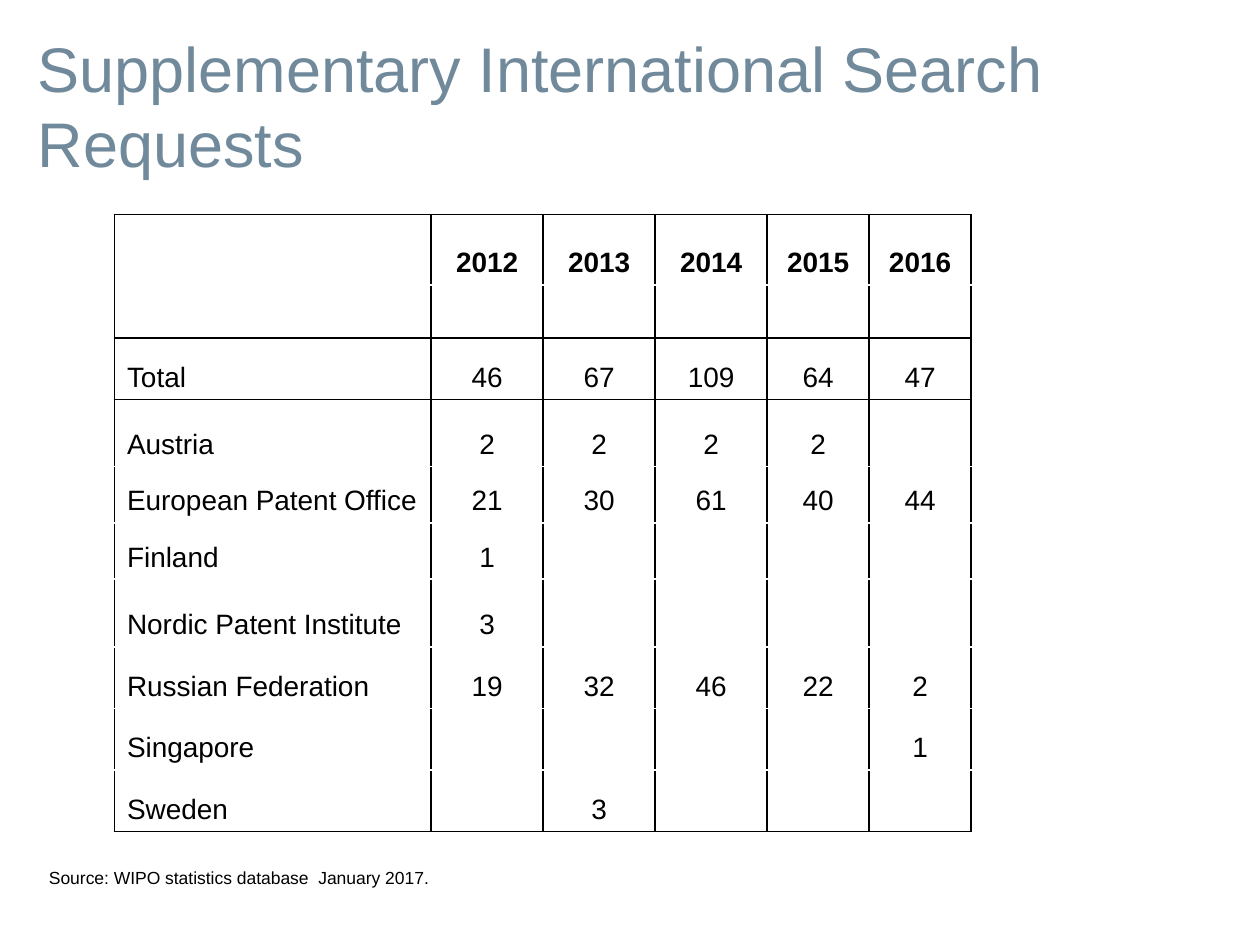
from dataclasses import dataclass

from lxml import etree
from pptx import Presentation
from pptx import util as u
from pptx.dml.color import RGBColor
from pptx.enum import text as t
from pptx.oxml import ns


@dataclass
class Theme:
    font: str = "Arial"
    ink: str = "000000"
    accent: str = "70899B"
    title: float = 36
    body: float = 16
    note: float = 10
    rule: float = 1
    hang: float = 27


YEARS = ["", "2012", "2013", "2014", "2015", "2016"]
ROWS = [
    YEARS,
    [""] * len(YEARS),
    ["Total", "46", "67", "109", "64", "47"],
    ["Austria", "2", "2", "2", "2", ""],
    ["European Patent Office", "21", "30", "61", "40", "44"],
    ["Finland", "1", "", "", "", ""],
    ["Nordic Patent Institute", "3", "", "", "", ""],
    ["Russian Federation", "19", "32", "46", "22", "2"],
    ["Singapore", "", "", "", "", "1"],
    ["Sweden", "", "3", "", "", ""],
]
WIDTHS = [181, 64, 64, 64, 58.3, 58.3]
HEIGHTS = [40.2, 30.5, 35, 38.4, 32.2, 32.2, 38.8, 35, 35.2, 35.2]
RULED = {1, 2, len(ROWS) - 1}  # rows with a line below


def write(frame, words, size, color, font, bold=False,
          align=t.PP_ALIGN.LEFT, hang=0, before=None):
    para = frame.paragraphs[0]
    para.alignment = align
    if hang:
        props = para._p.get_or_add_pPr()
        props.set("marL", str(u.Pt(hang)))
        props.set("indent", str(-u.Pt(hang)))
    if before is not None:
        para.space_before = u.Pt(before)
    run = para.add_run()
    run.text = words
    run.font.name = font
    run.font.size = u.Pt(size)
    run.font.bold = bold
    run.font.color.rgb = RGBColor.from_string(color)


def edge(cell, sides, color, width):
    """Draw lines on the given sides, in the order L, R, T, B."""
    props = cell._tc.get_or_add_tcPr()
    for spot, side in enumerate(sides):
        line = etree.Element(ns.qn(f"a:ln{side}"), w=str(u.Pt(width)))
        fill = etree.SubElement(line, ns.qn("a:solidFill"))
        etree.SubElement(fill, ns.qn("a:srgbClr"), val=color)
        props.insert(spot, line)


class Page:
    def __init__(self, deck, theme):
        self.theme = theme
        self.slide = deck.slides.add_slide(deck.slide_layouts[5])

    def title(self, words, left, top, width, height):
        box = self.slide.shapes.title
        box.left, box.top = u.Pt(left), u.Pt(top)
        box.width, box.height = u.Pt(width), u.Pt(height)
        frame = box.text_frame
        frame.word_wrap = True
        frame.auto_size = t.MSO_AUTO_SIZE.NONE
        frame.vertical_anchor = t.MSO_ANCHOR.MIDDLE
        write(frame, words, self.theme.title, self.theme.accent,
              self.theme.font, before=0)

    def note(self, words, left, top, width, height):
        box = self.slide.shapes.add_textbox(
            *map(u.Pt, (left, top, width, height)))
        frame = box.text_frame
        frame.word_wrap = True
        frame.auto_size = t.MSO_AUTO_SIZE.SHAPE_TO_FIT_TEXT
        write(frame, words, self.theme.note, self.theme.ink, self.theme.font)

    def table(self, rows, left, top, widths, heights):
        look = self.theme
        size = map(u.Pt, (left, top, sum(widths), sum(heights)))
        grid = self.slide.shapes.add_table(
            len(rows), len(widths), *size).table
        grid.first_row = grid.horz_banding = False
        for col, width in zip(grid.columns, widths):
            col.width = u.Pt(width)
        for row, height in zip(grid.rows, heights):
            row.height = u.Pt(height)
        for r, row in enumerate(rows):
            for c, words in enumerate(row):
                cell = grid.cell(r, c)
                cell.fill.background()
                cell.vertical_anchor = t.MSO_ANCHOR.BOTTOM
                above = r == 0 or r - 1 in RULED
                below = r in RULED or (r == 0 and c == 0)
                sides = "LR" + "T" * above + "B" * below
                edge(cell, sides, look.ink, look.rule)
                if words:
                    align = t.PP_ALIGN.CENTER if c else t.PP_ALIGN.LEFT
                    write(cell.text_frame, words, look.body, look.ink,
                          look.font, bold=r == 0, align=align, hang=look.hang)
        grid.cell(0, 0).merge(grid.cell(1, 0))


def main():
    deck = Presentation()
    deck.slide_width, deck.slide_height = u.Pt(720), u.Pt(540)
    page = Page(deck, Theme())
    page.title("Supplementary International Search Requests",
               14.4, 15, 714, 90)
    page.table(ROWS, 65.4, 122.6, WIDTHS, HEIGHTS)
    page.note("Source: WIPO statistics database  January 2017.",
              20.9, 491.8, 581, 19.4)
    deck.save("out.pptx")


if __name__ == "__main__":
    main()
